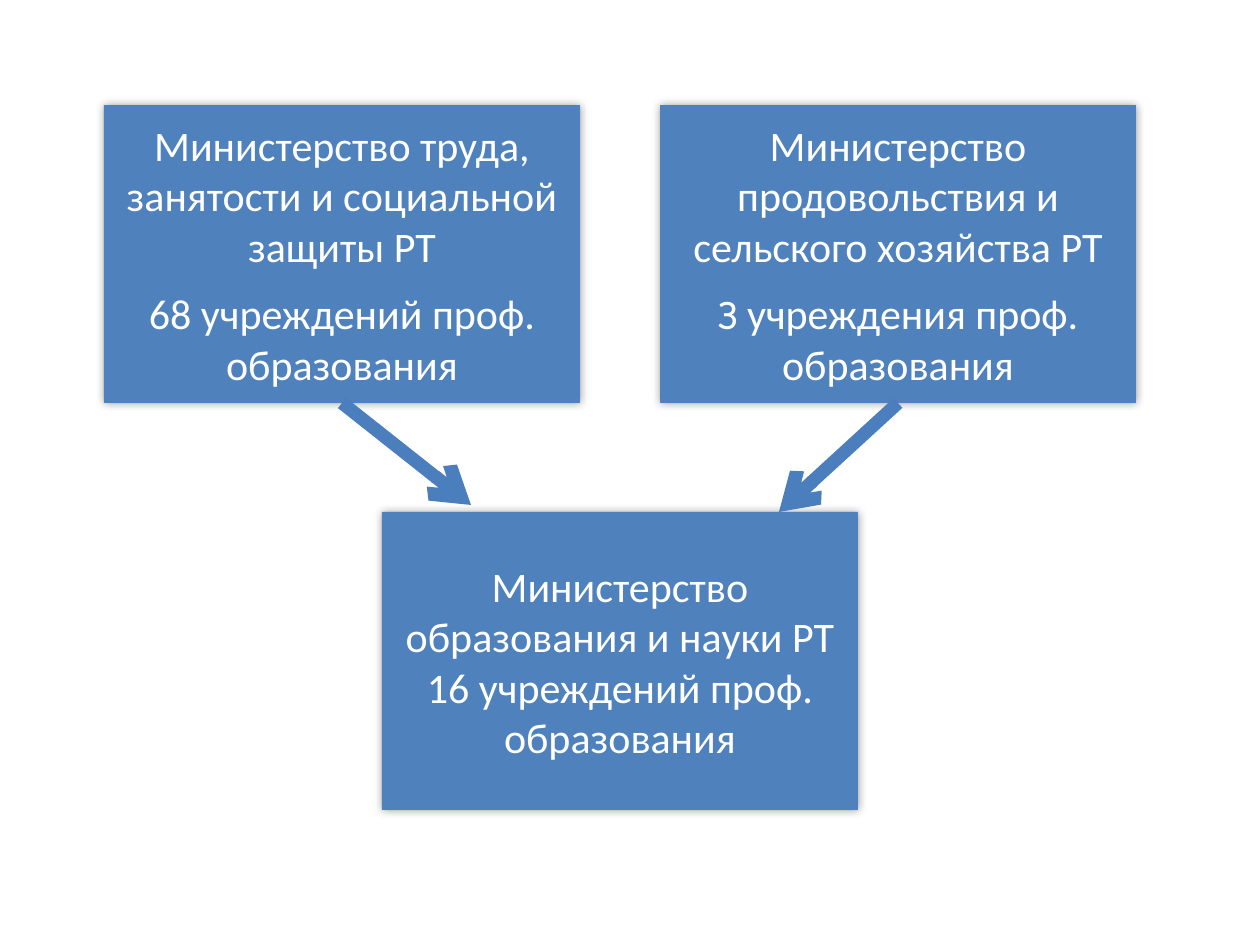
from lxml.etree import SubElement
from pptx import Presentation
from pptx.dml.color import RGBColor
from pptx.enum.shapes import MSO_CONNECTOR, MSO_SHAPE
from pptx.enum.text import MSO_ANCHOR, PP_ALIGN
from pptx.oxml.ns import qn
from pptx.util import Emu, Pt

PX = 914400 // 126
COLORS = {"box": "4F81BD", "arrow": "4B7EBC", "text": "FFFFFF", "shadow": "000000"}
BOX_W, BOX_H = 476, 298
TOP_Y, BOTTOM_Y = 105, 512
LEFT_X, RIGHT_X = 104, 660
CENTER_X = (LEFT_X + RIGHT_X) // 2
BOTTOM_SIDE = 2
TEXT_FORMAT = {"name": "Calibri", "size": Pt(24)}


def px(length):
    return Emu(length * PX)


def color(name):
    return RGBColor.from_string(COLORS[name])


def add_glow_shadow(box):
    """Soft shadow spreading evenly around the box."""
    box.shadow.inherit = False
    effects = box._element.spPr.find(qn("a:effectLst"))
    shadow = SubElement(effects, qn("a:outerShdw"), blurRad=str(Pt(5)),
                        dist="0", dir="0", rotWithShape="0")
    tint = SubElement(shadow, qn("a:srgbClr"), val=COLORS["shadow"])
    SubElement(tint, qn("a:alpha"), val="40000")


def add_ministry(slide, x, y, ministry, institutions, gap=0):
    box = slide.shapes.add_shape(MSO_SHAPE.RECTANGLE, px(x), px(y), px(BOX_W), px(BOX_H))
    box.fill.solid()
    box.fill.fore_color.rgb = color("box")
    box.line.fill.background()
    add_glow_shadow(box)

    # Ministry name, then its number of institutions
    frame = box.text_frame
    frame.word_wrap = True
    frame.vertical_anchor = MSO_ANCHOR.MIDDLE
    for paragraph, text in ((frame.paragraphs[0], ministry),
                            (frame.add_paragraph(), institutions)):
        paragraph.alignment = PP_ALIGN.CENTER
        run = paragraph.add_run()
        run.text = text
        for key, value in TEXT_FORMAT.items():
            setattr(run.font, key, value)
        run.font.color.rgb = color("text")
    paragraph.space_before = Pt(gap)
    return box


def add_arrow(slide, ministry, end_x, end_y):
    arrow = slide.shapes.add_connector(MSO_CONNECTOR.STRAIGHT, 0, 0, px(end_x), px(end_y))
    arrow.begin_connect(ministry, BOTTOM_SIDE)
    arrow.line.color.rgb = color("arrow")
    arrow.line.width = Pt(7.5)
    SubElement(arrow.line._get_or_add_ln(), qn("a:tailEnd"), type="arrow")
    SubElement(arrow._element.spPr, qn("a:effectLst"))


def main():
    deck = Presentation()
    deck.slide_width, deck.slide_height = px(1260), px(945)
    slide = deck.slides.add_slide(deck.slide_layouts[6])

    # Ministries handing over their institutions
    labour = add_ministry(slide, LEFT_X, TOP_Y,
                          "Министерство труда, занятости и социальной защиты РТ",
                          "68 учреждений проф. образования", gap=10)
    agriculture = add_ministry(slide, RIGHT_X, TOP_Y,
                               "Министерство продовольствия и сельского хозяйства РТ",
                               "З учреждения проф. образования", gap=10)

    # Receiving ministry
    add_ministry(slide, CENTER_X, BOTTOM_Y,
                 "Министерство образования и науки РТ",
                 "16 учреждений проф. образования")

    # Arrows to the receiving ministry
    add_arrow(slide, agriculture, 779, BOTTOM_Y)
    add_arrow(slide, labour, 471, 505)

    deck.save("out.pptx")


if __name__ == "__main__":
    main()
